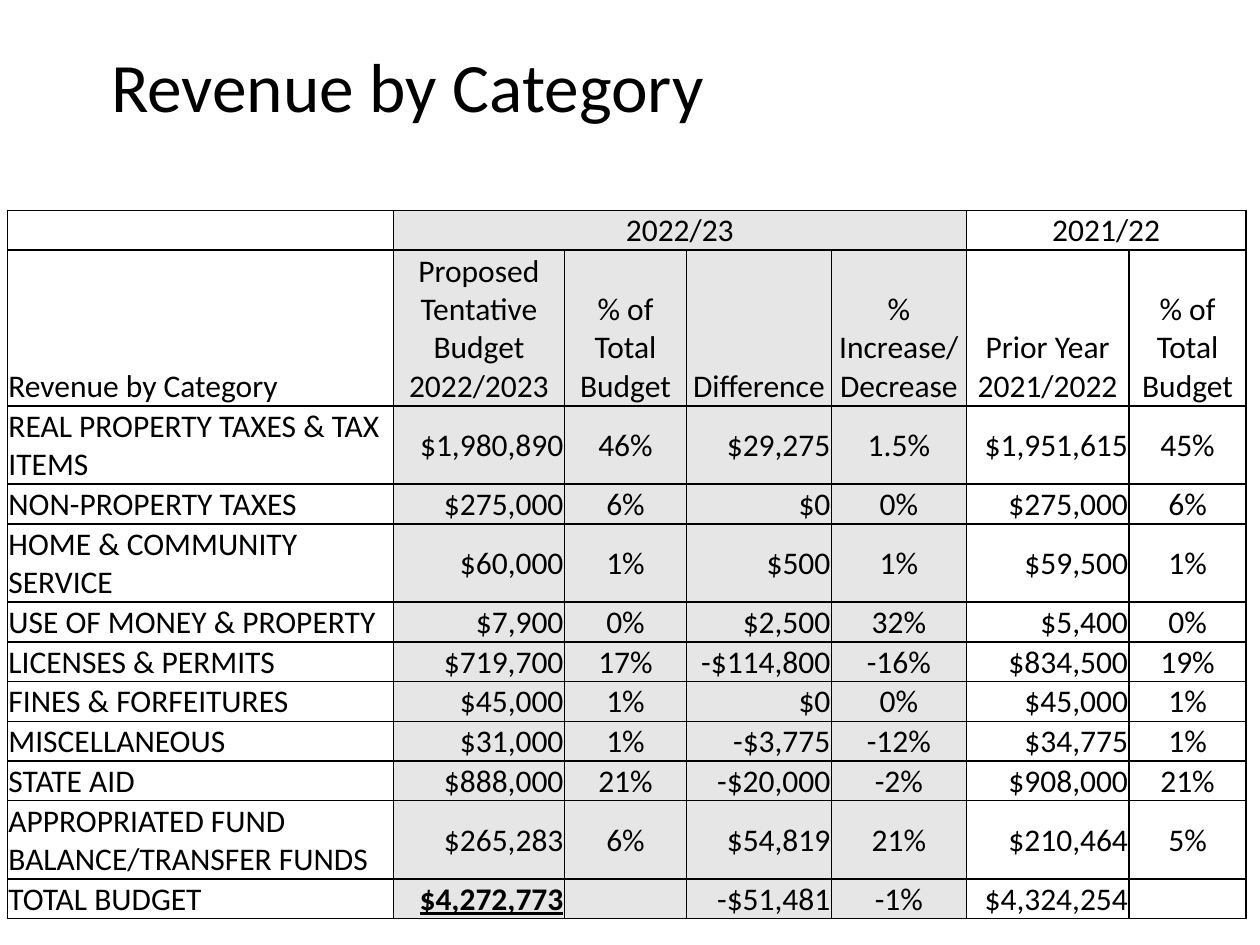
from dataclasses import dataclass

from lxml import etree
from pptx import Presentation
from pptx import util as u
from pptx.dml.color import RGBColor
from pptx.enum import text
from pptx.oxml import ns

FONT = "Calibri"
BLACK = "000000"
GREY = "E7E6E6"
LEFT, CENTER, RIGHT = text.PP_ALIGN.LEFT, text.PP_ALIGN.CENTER, text.PP_ALIGN.RIGHT
BOTTOM, MIDDLE = text.MSO_ANCHOR.BOTTOM, text.MSO_ANCHOR.MIDDLE


@dataclass
class Column:
    heading: str
    width: float
    align: text.PP_ALIGN
    fill: str = ""


@dataclass
class Row:
    values: list[str]
    lines: int = 1


COLUMNS = [
    Column("Revenue by Category", 7.78, LEFT),
    Column("Proposed Tentative Budget 2022/2023", 3.45, RIGHT, GREY),
    Column("% of Total Budget", 2.46, CENTER, GREY),
    Column("Difference", 2.92, RIGHT, GREY),
    Column("% Increase/ Decrease", 2.72, CENTER, GREY),
    Column("Prior Year 2021/2022", 3.28, RIGHT),
    Column("% of Total Budget", 2.36, CENTER),
]
HEADER_ROWS = [
    Row(["", "2022/23", "", "", "", "2021/22", ""]),
    Row([c.heading for c in COLUMNS], lines=4),
]
YEAR_SPANS = [(1, 4), (5, 6)]  # first and last column of each year
DATA_ROWS = [
    Row(["REAL PROPERTY TAXES & TAX ITEMS", "$1,980,890", "46%", "$29,275", "1.5%",
         "$1,951,615", "45%"], lines=2),
    Row(["NON-PROPERTY TAXES", "$275,000", "6%", "$0", "0%", "$275,000", "6%"]),
    Row(["HOME & COMMUNITY SERVICE", "$60,000", "1%", "$500", "1%", "$59,500", "1%"],
        lines=2),
    Row(["USE OF MONEY & PROPERTY", "$7,900", "0%", "$2,500", "32%", "$5,400", "0%"]),
    Row(["LICENSES & PERMITS", "$719,700", "17%", "-$114,800", "-16%", "$834,500", "19%"]),
    Row(["FINES & FORFEITURES", "$45,000", "1%", "$0", "0%", "$45,000", "1%"]),
    Row(["MISCELLANEOUS", "$31,000", "1%", "-$3,775", "-12%", "$34,775", "1%"]),
    Row(["STATE AID", "$888,000", "21%", "-$20,000", "-2%", "$908,000", "21%"]),
    Row(["APPROPRIATED FUND BALANCE/TRANSFER FUNDS", "$265,283", "6%", "$54,819", "21%",
         "$210,464", "5%"], lines=2),
    Row(["TOTAL BUDGET", "$4,272,773", "", "-$51,481", "-1%", "$4,324,254", ""]),
]


def rgb(color: str) -> RGBColor:
    return RGBColor.from_string(color)


def format_runs(p, size: float) -> None:
    for r in p.runs:
        r.font.name = FONT
        r.font.size = u.Pt(size)
        r.font.color.rgb = rgb(BLACK)


def add_borders(cell, color: str = BLACK, width: float = 1) -> None:
    tc_pr = cell._tc.get_or_add_tcPr()
    for side in ("lnL", "lnR", "lnT", "lnB"):
        ln = etree.SubElement(tc_pr, ns.qn(f"a:{side}"), w=str(u.Pt(width)))
        fill = etree.SubElement(ln, ns.qn("a:solidFill"))
        etree.SubElement(fill, ns.qn("a:srgbClr"), val=color)


def fill_cell(cell, value: str, align: text.PP_ALIGN, anchor: text.MSO_ANCHOR,
              fill: str) -> None:
    add_borders(cell)
    if fill:
        cell.fill.solid()
        cell.fill.fore_color.rgb = rgb(fill)
    else:
        cell.fill.background()
    cell.margin_left = cell.margin_right = cell.margin_top = u.Cm(0.02)
    cell.margin_bottom = 0
    cell.vertical_anchor = anchor
    p = cell.text_frame.paragraphs[0]
    p.text = value
    p.alignment = align
    format_runs(p, 18)


def add_title(slide, title: str) -> None:
    sp = slide.shapes.title
    sp.left, sp.top, sp.width, sp.height = u.Cm(2.06), u.Cm(0.94), u.Cm(21.89), u.Cm(1.73)
    tf = sp.text_frame
    tf.text = title
    tf.auto_size = text.MSO_AUTO_SIZE.NONE
    tf.vertical_anchor = MIDDLE
    tf.margin_left = tf.margin_right = u.Cm(0.18)
    tf.margin_top = tf.margin_bottom = u.Cm(0.1)
    p = tf.paragraphs[0]
    p.alignment = LEFT
    p.line_spacing = 0.9
    format_runs(p, 39.6)


def add_revenue_table(slide) -> None:
    rows = HEADER_ROWS + DATA_ROWS
    heights = [u.Cm(0.78 * row.lines + 0.02) for row in rows]
    widths = [u.Cm(c.width) for c in COLUMNS]
    table = slide.shapes.add_table(len(rows), len(COLUMNS), u.Cm(0.15), u.Cm(4.24),
                                   sum(widths), sum(heights)).table
    table.first_row = table.horz_banding = False
    for column, width in zip(table.columns, widths):
        column.width = width
    for i, (row, height) in enumerate(zip(rows, heights)):
        table.rows[i].height = height
        is_header = i < len(HEADER_ROWS)
        for j, (value, column) in enumerate(zip(row.values, COLUMNS)):
            align = CENTER if is_header and j else column.align
            anchor = MIDDLE if j and not is_header else BOTTOM
            fill_cell(table.cell(i, j), value, align, anchor, column.fill)
    for first, last in YEAR_SPANS:
        table.cell(0, first).merge(table.cell(0, last))
    total = table.cell(len(rows) - 1, 1).text_frame.paragraphs[0].runs[0]
    total.font.bold = total.font.underline = True


def main() -> None:
    prs = Presentation()
    prs.slide_width, prs.slide_height = u.Cm(25.4), u.Cm(19.05)
    slide = prs.slides.add_slide(prs.slide_layouts[5])
    add_title(slide, "Revenue by Category")
    add_revenue_table(slide)
    prs.save("out.pptx")


if __name__ == "__main__":
    main()
